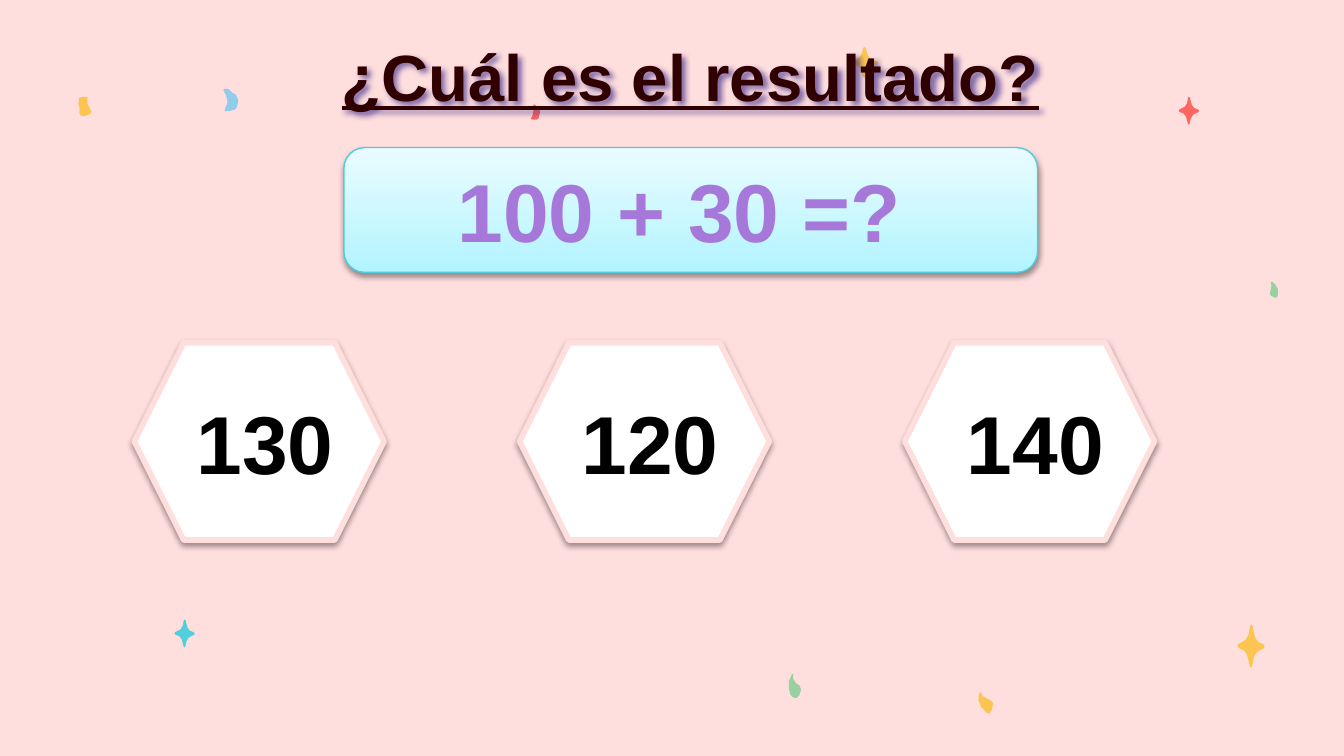
from dataclasses import dataclass
from typing import NamedTuple

from lxml import etree
from pptx import Presentation
from pptx.dml.color import RGBColor
from pptx.enum import shapes, text
from pptx.oxml.ns import qn
from pptx.util import Cm, Pt


@dataclass(frozen=True)
class Theme:
    font: str = "Arial"
    title_size: int = 35
    number_size: int = 44
    background: str = "FFDEDE"
    title: str = "300000"
    title_shadow: str = "2A1A80"
    sum: str = "A578DA"
    sum_line: str = "4DCDDC"
    sum_bottom: str = "B2F4FF"
    sum_top: str = "EAFCFF"
    answer: str = "000000"
    answer_fill: str = "FFFFFF"
    shadow: str = "000000"
    yellow: str = "FCC552"
    green: str = "98D1A1"
    blue: str = "8FCDEA"
    red: str = "FE6761"
    teal: str = "52CFDD"


class Box(NamedTuple):
    left: float
    top: float
    width: float
    height: float

    def lengths(self) -> list[int]:
        return [Cm(v) for v in self]


class Confetti(NamedTuple):
    """A paper scrap; its points are tenths of a millimetre from left, top."""
    color: str
    left: float
    top: float
    points: list[tuple[int, int]]


class Sparkle(NamedTuple):
    color: str
    box: Box


T = Theme()
CONFETTI = [
    Confetti(T.yellow, 1.48, 1.83, [
        (2, 2), (8, 0), (17, 0), (17, 12), (20, 18), (25, 28), (22, 33),
        (13, 36), (5, 36), (2, 30), (3, 23), (0, 13)]),
    Confetti(T.green, 24, 5.33, [
        (2, 0), (5, 0), (10, 5), (15, 13), (15, 25), (14, 28), (10, 30),
        (2, 26), (0, 22), (3, 8)]),
    Confetti(T.blue, 4.22, 1.68, [
        (0, 2), (3, 0), (10, 0), (18, 8), (23, 10), (28, 20), (28, 25),
        (25, 36), (22, 39), (12, 42), (3, 42), (3, 38), (8, 26), (7, 18), (5, 12)]),
    Confetti(T.red, 10.03, 1.98, [
        (5, 0), (8, 0), (15, 8), (18, 13), (15, 25), (12, 28), (3, 28),
        (0, 26), (3, 22), (5, 13)]),
    Confetti(T.green, 14.91, 12.73, [
        (8, 0), (8, 10), (13, 18), (20, 23), (23, 30), (20, 41), (15, 46),
        (10, 46), (5, 43), (2, 38), (0, 30), (0, 15), (5, 3)]),
    Confetti(T.yellow, 18.49, 13.08, [
        (5, 0), (8, 8), (25, 17), (28, 22), (25, 35), (20, 41), (17, 40),
        (5, 28), (0, 15), (2, 3)]),
]
SPARKLES = [
    Sparkle(T.yellow, Box(23.39, 11.81, 0.51, 0.81)),
    Sparkle(T.teal, Box(3.3, 11.71, 0.38, 0.53)),
    Sparkle(T.red, Box(22.28, 1.83, 0.38, 0.53)),
    Sparkle(T.yellow, Box(16.08, 0.89, 0.51, 0.58)),
]
# One arm of a sparkle, from top to right, on a grid of 100 from the centre
SPARKLE_QUARTER = [(0, -100), (10, -94), (18, -69), (30, -40), (52, -20), (83, -11), (96, -6)]

TITLE_BOX = Box(4.01, 0.43, 18.08, 1.73)
SUM_BOX = Box(6.5, 2.79, 13.11, 2.36)
ANSWERS = ["130", "120", "140"]
ANSWER_BOX = Box(2.54, 6.48, 4.72, 3.73)
ANSWER_STEP = 7.28


def rgb(color: str) -> RGBColor:
    return RGBColor.from_string(color)


def add_shadow(sp, color: str, alpha: int, blur: float, dist: float, angle: int) -> None:
    sp.shadow.inherit = False
    effects = sp._element.spPr.find(qn("a:effectLst"))
    outer = etree.SubElement(effects, qn("a:outerShdw"), blurRad=str(Pt(blur)),
                             dist=str(Pt(dist)), dir=str(angle * 60000),
                             algn="ctr", rotWithShape="0")
    clr = etree.SubElement(outer, qn("a:srgbClr"), val=color)
    etree.SubElement(clr, qn("a:alpha"), val=str(alpha * 1000))


def write(sp, words: str, size: int, color: str, align, anchor) -> None:
    tf = sp.text_frame
    tf.text = words
    tf.word_wrap = True
    tf.vertical_anchor = anchor
    p = tf.paragraphs[0]
    p.alignment = align
    p.font.name = T.font
    p.font.size = Pt(size)
    p.font.bold = True
    p.font.color.rgb = rgb(color)


def add_outline(s, color: str, left: float, top: float, points, scale) -> None:
    builder = s.shapes.build_freeform(*points[0], scale=scale)
    builder.add_line_segments(points[1:], close=True)
    sp = builder.convert_to_shape(Cm(left), Cm(top))
    sp.fill.solid()
    sp.fill.fore_color.rgb = rgb(color)
    sp.line.fill.background()
    sp.shadow.inherit = False


def add_sparkle(s, sparkle: Sparkle) -> None:
    points, arm = [], SPARKLE_QUARTER
    for _ in range(4):
        points += arm
        # The next quarter mirrors the long and short axes in turn
        arm = [(-y, x) for x, y in arm]
    points = [(x + 100, y + 100) for x, y in points]
    box = sparkle.box
    add_outline(s, sparkle.color, box.left, box.top, points,
                (Cm(box.width) / 200, Cm(box.height) / 200))


def add_card(s, kind, box: Box, line: str, width: float):
    sp = s.shapes.add_shape(kind, *box.lengths())
    sp.line.color.rgb = rgb(line)
    sp.line.width = Pt(width)
    add_shadow(sp, T.shadow, 38, 3.1, 1.6, 90)
    return sp


def add_title(s) -> None:
    sp = s.shapes.title
    sp.left, sp.top, sp.width, sp.height = TITLE_BOX.lengths()
    write(sp, "¿Cuál es el resultado?", T.title_size, T.title,
          text.PP_ALIGN.CENTER, text.MSO_ANCHOR.BOTTOM)
    tf = sp.text_frame
    tf.margin_left = tf.margin_right = tf.margin_top = tf.margin_bottom = 0
    tf.auto_size = text.MSO_AUTO_SIZE.NONE
    tf.paragraphs[0].font.underline = True
    add_shadow(sp, T.title_shadow, 60, 3, 2, 45)


def add_sum(s) -> None:
    sp = add_card(s, shapes.MSO_SHAPE.ROUNDED_RECTANGLE, SUM_BOX, T.sum_line, 0.75)
    sp.fill.gradient()
    sp.fill.gradient_angle = 90
    for stop, color in zip(sp.fill.gradient_stops, (T.sum_bottom, T.sum_top)):
        stop.color.rgb = rgb(color)
    write(sp, "100 + 30 =? ", T.number_size, T.sum,
          text.PP_ALIGN.CENTER, text.MSO_ANCHOR.MIDDLE)


def add_answer(s, words: str, box: Box) -> None:
    sp = add_card(s, shapes.MSO_SHAPE.HEXAGON, box, T.background, 3)
    sp.fill.solid()
    sp.fill.fore_color.rgb = rgb(T.answer_fill)
    write(sp, words, T.number_size, T.answer,
          text.PP_ALIGN.RIGHT, text.MSO_ANCHOR.MIDDLE)


def main() -> None:
    prs = Presentation()
    prs.slide_width, prs.slide_height = Cm(25.4), Cm(14.29)
    s = prs.slides.add_slide(prs.slide_layouts[5])
    s.background.fill.solid()
    s.background.fill.fore_color.rgb = rgb(T.background)
    for scrap in CONFETTI:
        add_outline(s, *scrap, Cm(0.01))
    for sparkle in SPARKLES:
        add_sparkle(s, sparkle)
    # The title stands in front of the confetti
    s.shapes._spTree.append(s.shapes.title._element)
    add_title(s)
    add_sum(s)
    for i, words in enumerate(ANSWERS):
        add_answer(s, words, ANSWER_BOX._replace(left=ANSWER_BOX.left + i * ANSWER_STEP))
    prs.save("out.pptx")


if __name__ == "__main__":
    main()
